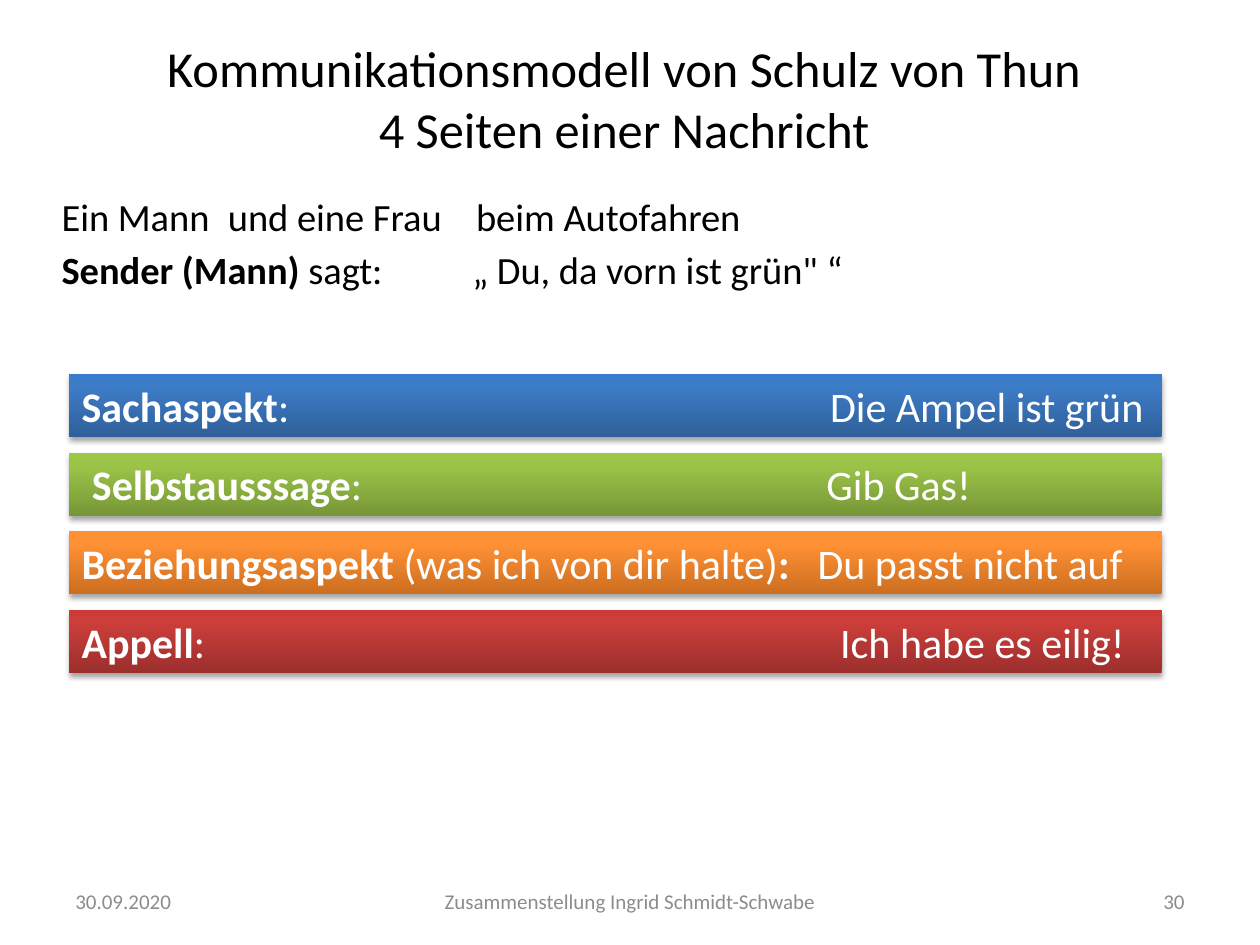
import pptx
import pptx.util
import pptx.dml.color
import pptx.enum.shapes
import pptx.enum.text
import pptx.oxml.ns
from lxml import etree

Inches = pptx.util.Inches
Pt = pptx.util.Pt
Align = pptx.enum.text.PP_ALIGN
Anchor = pptx.enum.text.MSO_ANCHOR
qn = pptx.oxml.ns.qn


def color(text):
    return pptx.dml.color.RGBColor.from_string(text)


def add(parent, tag, **attrs):
    return etree.SubElement(parent, qn(tag), attrs)


def style(para, size, ink, align=Align.LEFT, tabs=()):
    if tabs:
        stops = add(para._p.get_or_add_pPr(), "a:tabLst")
        for pos in tabs:
            add(stops, "a:tab", pos=str(Inches(pos)), algn="l")
    para.alignment = align
    para.font.name = "Calibri"
    para.font.size = Pt(size)
    para.font.color.rgb = color(ink)


def write(para, parts):
    """Add (text, bold) parts as runs."""
    for text, bold in parts:
        run = para.add_run()
        run.text = text
        run.font.bold = bold


def label(slide, box, text, size, ink, align):
    frame = slide.shapes.add_textbox(*map(Inches, box)).text_frame
    frame.word_wrap = True
    frame.vertical_anchor = Anchor.MIDDLE
    para = frame.paragraphs[0]
    para.text = text
    style(para, size, ink, align)


def intro(slide, box):
    frame = slide.shapes.add_textbox(*map(Inches, box)).text_frame
    frame.word_wrap = True
    first, second = frame.paragraphs[0], frame.add_paragraph()
    second.space_before = Pt(4.4)
    style(first, 22, "000000", tabs=(1.32, 3.29))
    style(second, 22, "000000", tabs=(3.26,))
    write(first, [("Ein Mann\tund eine Frau\tbeim Autofahren", False)])
    write(second, [("Sender (Mann) ", True), ("sagt:\t„ Du, da vorn ist grün\" “", False)])


def bar(slide, box, shades, parts, tab, inset=0.1):
    shape = slide.shapes.add_shape(
        pptx.enum.shapes.MSO_SHAPE.RECTANGLE, *map(Inches, box))
    shape.line.fill.background()

    # Gradient from dark at the bottom to light at the top
    shape.fill.gradient()
    shape.fill.gradient_angle = 90
    props = shape._element.spPr
    stops = props.find(".//" + qn("a:gsLst"))
    for old in list(stops):
        stops.remove(old)
    for pos, shade in zip((0, 80, 100), shades):
        stop = add(stops, "a:gs", pos=str(pos * 1000))
        add(stop, "a:srgbClr", val=shade)

    # Soft shadow below
    shape.shadow.inherit = False
    shadow = add(props.find(qn("a:effectLst")), "a:outerShdw", blurRad="40000",
                 dist="23000", dir="5400000", rotWithShape="0")
    add(add(shadow, "a:srgbClr", val="000000"), "a:alpha", val="35000")

    frame = shape.text_frame
    frame.word_wrap = True
    frame.vertical_anchor = Anchor.TOP
    frame.margin_left = Inches(inset)
    para = frame.paragraphs[0]
    style(para, 24, "FFFFFF", tabs=(tab,))
    write(para, parts)


def bars(slide, box):
    left, top, width, height = box
    rows = [
        (("2F5F99", "3D7CC7", "3A7CCB"),
         [("Sachaspekt", True), (":\tDie Ampel ist grün", False)], 5.94),
        (("779737", "9BC348", "9DC746"),
         [("Selbstausssage", True), (":\tGib Gas!", False)], 5.83, 0.18),
        (("CC6E20", "FF9034", "FF9136"),
         [("Beziehungsaspekt ", True), ("(was ich von dir halte)", False),
          (":\t", True), ("Du passt nicht auf", False)], 5.84),
        (("9C2F2D", "CB3E3A", "CE3B37"),
         [("Appell", True), (":\tIch habe es eilig!", False)], 6.02),
    ]
    tall = 0.5
    step = (height - tall) / (len(rows) - 1)
    for i, row in enumerate(rows):
        bar(slide, (left, top + i * step, width, tall), *row)


def footer(slide, box):
    left, top, width, height = box
    side, mid = 2.33, 3.17
    cells = [
        (left, side, "30.09.2020", Align.LEFT),
        (left + (width - mid) / 2, mid,
         "Zusammenstellung Ingrid Schmidt-Schwabe", Align.CENTER),
        (left + width - side, side, "30", Align.RIGHT),
    ]
    for x, wide, text, align in cells:
        label(slide, (x, top, wide, height), text, 12, "8C8C8C", align)


def main():
    deck = pptx.Presentation()
    deck.slide_width, deck.slide_height = Inches(10), Inches(7.5)
    slide = deck.slides.add_slide(deck.slide_layouts[6])
    label(slide, (0.23, 0.23, 9.45, 1.09),
          "Kommunikationsmodell von Schulz von Thun\v4 Seiten einer Nachricht",
          28.8, "000000", Align.CENTER)
    intro(slide, (0.39, 1.48, 8.64, 1.13))
    bars(slide, (0.55, 2.97, 8.67, 2.37))
    footer(slide, (0.5, 6.95, 9, 0.4))
    deck.save("out.pptx")


if __name__ == "__main__":
    main()
